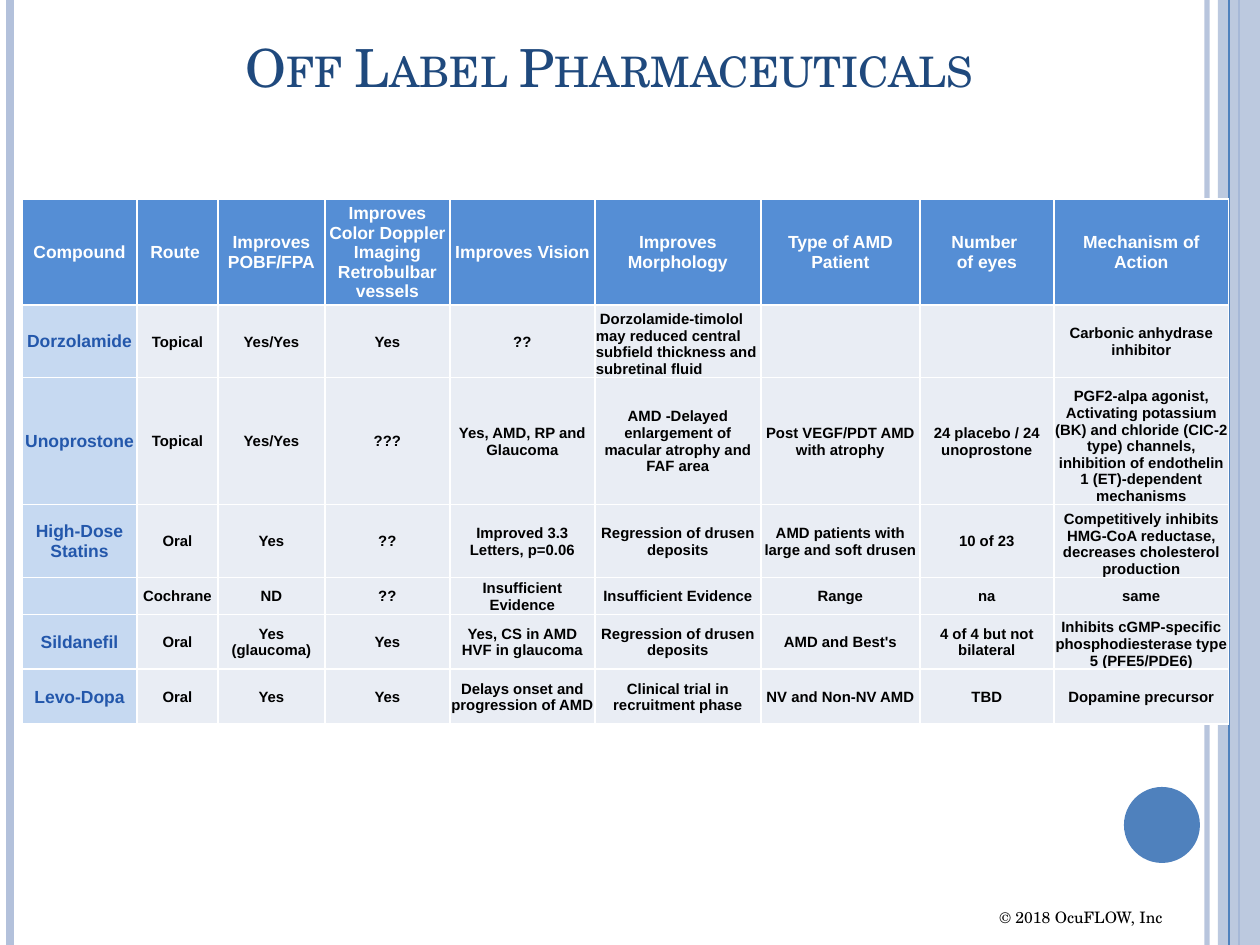
from lxml.etree import SubElement
from pptx import Presentation
from pptx.dml.color import RGBColor
from pptx.enum.shapes import MSO_CONNECTOR as CONNECTOR, MSO_SHAPE as SHAPE
from pptx.enum.text import MSO_ANCHOR as ANCHOR, PP_ALIGN as ALIGN
from pptx.oxml.ns import qn
from pptx.util import Emu, Pt

SCALE = 914400 / 126
WIDTH, HEIGHT = 1260, 945
SERIF, SANS = "TeX Gyre Schola", "Arial"
COLORS = {
    "white": "FFFFFF", "black": "000000", "title": "1F497D",
    "pale": "B3C1DB", "blue": "4F81BD", "header": "558ED5",
    "compound": "C6D9F1", "compound_text": "2357AB", "body": "E9EDF4",
}

COLUMN_WIDTHS = [115, 81, 107, 125, 145, 166, 159, 134, 175]
ROW_HEIGHTS = [99, 70, 127, 73, 37, 54, 55]
ROWS = [
    ["Compound", "Route ", "Improves POBF/FPA",
     "Improves Color Doppler Imaging Retrobulbar vessels", "Improves Vision",
     "Improves Morphology", "Type of AMD Patient", "Number \nof eyes",
     "Mechanism of Action"],
    ["Dorzolamide", "Topical", "Yes/Yes", "Yes", "??",
     " Dorzolamide-timolol may reduced central subfield thickness and subretinal fluid",
     "", "", "Carbonic anhydrase inhibitor"],
    ["Unoprostone", "Topical", "Yes/Yes", "???", "Yes, AMD, RP and Glaucoma",
     "AMD -Delayed enlargement of macular atrophy and FAF area",
     "Post VEGF/PDT AMD with atrophy", "24 placebo / 24 unoprostone",
     "PGF2-alpa agonist, Activating potassium (BK) and chloride (CIC-2 type) "
     "channels, inhibition of endothelin 1 (ET)-dependent mechanisms"],
    ["High-Dose Statins", "Oral", "Yes", "??", "Improved 3.3 Letters, p=0.06",
     "Regression of drusen deposits", "AMD patients with large and soft drusen",
     "10 of 23",
     "Competitively inhibits HMG-CoA reductase, decreases cholesterol production"],
    ["", "Cochrane", "ND", "??", "Insufficient Evidence", "Insufficient Evidence",
     "Range", "na", "same"],
    ["Sildanefil", "Oral", "Yes (glaucoma)", "Yes",
     "Yes, CS in AMD\nHVF in glaucoma", "Regression of drusen deposits",
     "AMD and Best's", "4 of 4 but not bilateral",
     "Inhibits cGMP-specific phosphodiesterase type 5 (PFE5/PDE6)"],
    ["Levo-Dopa", "Oral", "Yes", "Yes", "Delays onset and progression of AMD",
     "Clinical trial in recruitment phase", "NV and Non-NV AMD", "TBD",
     "Dopamine precursor"],
]
LEFT_ALIGNED = {(1, 5)}
BOTTOM_ANCHORED = {(1, 5), (2, 8), (3, 8), (5, 8)}


def px(value):
    return Emu(round(value * SCALE))


def rgb(name):
    return RGBColor.from_string(COLORS[name])


def paint(fill, color, opacity=100):
    fill.solid()
    fill.fore_color.rgb = rgb(color)
    if opacity < 100:
        color_node = fill._xPr.find(qn("a:solidFill"))[0]
        SubElement(color_node, qn("a:alpha"), val=str(opacity * 1000))


def write_text(frame, text, *, size, color, font, bold=False,
               align=ALIGN.CENTER, small_caps=False):
    for index, line in enumerate(text.split("\n")):
        paragraph = frame.paragraphs[0] if index == 0 else frame.add_paragraph()
        paragraph.alignment = align
        if not line:
            # An empty cell keeps its row low only with a small end mark
            SubElement(paragraph._p, qn("a:endParaRPr"), sz=str(int(size * 100)))
            continue
        run = paragraph.add_run()
        run.text = line
        run.font.size = Pt(size)
        run.font.name = font
        run.font.bold = bold
        run.font.color.rgb = rgb(color)
        if small_caps:
            run.font._element.set("cap", "small")


def add_text(slide, box, text, *, anchor=ANCHOR.TOP, wrap=True, **text_format):
    frame = slide.shapes.add_textbox(*map(px, box)).text_frame
    frame.word_wrap = wrap
    frame.vertical_anchor = anchor
    write_text(frame, text, **text_format)


def add_vertical_line(slide, x, color, width, opacity=100):
    line = slide.shapes.add_connector(
        CONNECTOR.STRAIGHT, px(x), 0, px(x), px(HEIGHT))
    line.line.width = Pt(width)
    paint(line.line.fill, color, opacity)
    SubElement(line._element.spPr, qn("a:effectLst"))


def add_filled_shape(slide, kind, box, color, opacity=100):
    shape = slide.shapes.add_shape(kind, *map(px, box))
    shape.shadow.inherit = False
    shape.line.fill.background()
    paint(shape.fill, color, opacity)


def set_borders(cell, color, width):
    properties = cell._tc.get_or_add_tcPr()
    for position, side in enumerate(("a:lnL", "a:lnR", "a:lnT", "a:lnB")):
        border = properties.makeelement(qn(side), {"w": str(Pt(width))})
        fill = SubElement(border, qn("a:solidFill"))
        SubElement(fill, qn("a:srgbClr"), val=COLORS[color])
        properties.insert(position, border)


def cell_style(row, column):
    if row == 0:
        return "header", "white", 10
    if column == 0:
        return "compound", "compound_text", 10
    return "body", "black", 8.5


def add_drug_table(slide, left, top):
    box = (left, top, sum(COLUMN_WIDTHS), sum(ROW_HEIGHTS))
    table = slide.shapes.add_table(
        len(ROWS), len(COLUMN_WIDTHS), *map(px, box)).table
    for column, width in zip(table.columns, COLUMN_WIDTHS):
        column.width = px(width)
    for row, height in zip(table.rows, ROW_HEIGHTS):
        row.height = px(height)
    for i, texts in enumerate(ROWS):
        for j, text in enumerate(texts):
            cell = table.cell(i, j)
            fill, color, size = cell_style(i, j)
            cell.margin_left = cell.margin_right = cell.margin_top = px(1)
            cell.margin_bottom = 0
            low = (i, j) in BOTTOM_ANCHORED
            cell.vertical_anchor = ANCHOR.BOTTOM if low else ANCHOR.MIDDLE
            paint(cell.fill, fill)
            set_borders(cell, "white", 1)
            align = ALIGN.LEFT if (i, j) in LEFT_ALIGNED else ALIGN.CENTER
            write_text(cell.text_frame, text, size=size, color=color,
                       font=SANS, bold=True, align=align)


def main():
    presentation = Presentation()
    presentation.slide_width, presentation.slide_height = px(WIDTH), px(HEIGHT)
    slide = presentation.slides.add_slide(presentation.slide_layouts[6])

    # Side stripes and disc
    add_vertical_line(slide, 1207, "pale", 3, opacity=93)
    add_vertical_line(slide, 10, "pale", 4.5)
    add_vertical_line(slide, 1239, "blue", 1.5)
    add_filled_shape(slide, SHAPE.RECTANGLE, (1218, 0, 42, HEIGHT), "pale", opacity=87)
    add_vertical_line(slide, 1229, "blue", 0.75)
    add_filled_shape(slide, SHAPE.OVAL, (1124, 787, 76, 76), "blue")

    # Title
    add_text(slide, (32, 10, 1155, 94), "Off Label Pharmaceuticals",
             anchor=ANCHOR.BOTTOM, size=30, color="title", font=SERIF,
             small_caps=True)

    # Comparison of compounds
    add_drug_table(slide, 22, 199)

    # Copyright line
    add_text(slide, (987, 902, 197, 32), "© 2018 OcuFLOW, Inc", wrap=False,
             size=9, color="black", font=SERIF, align=ALIGN.LEFT)

    presentation.save("out.pptx")


if __name__ == "__main__":
    main()
